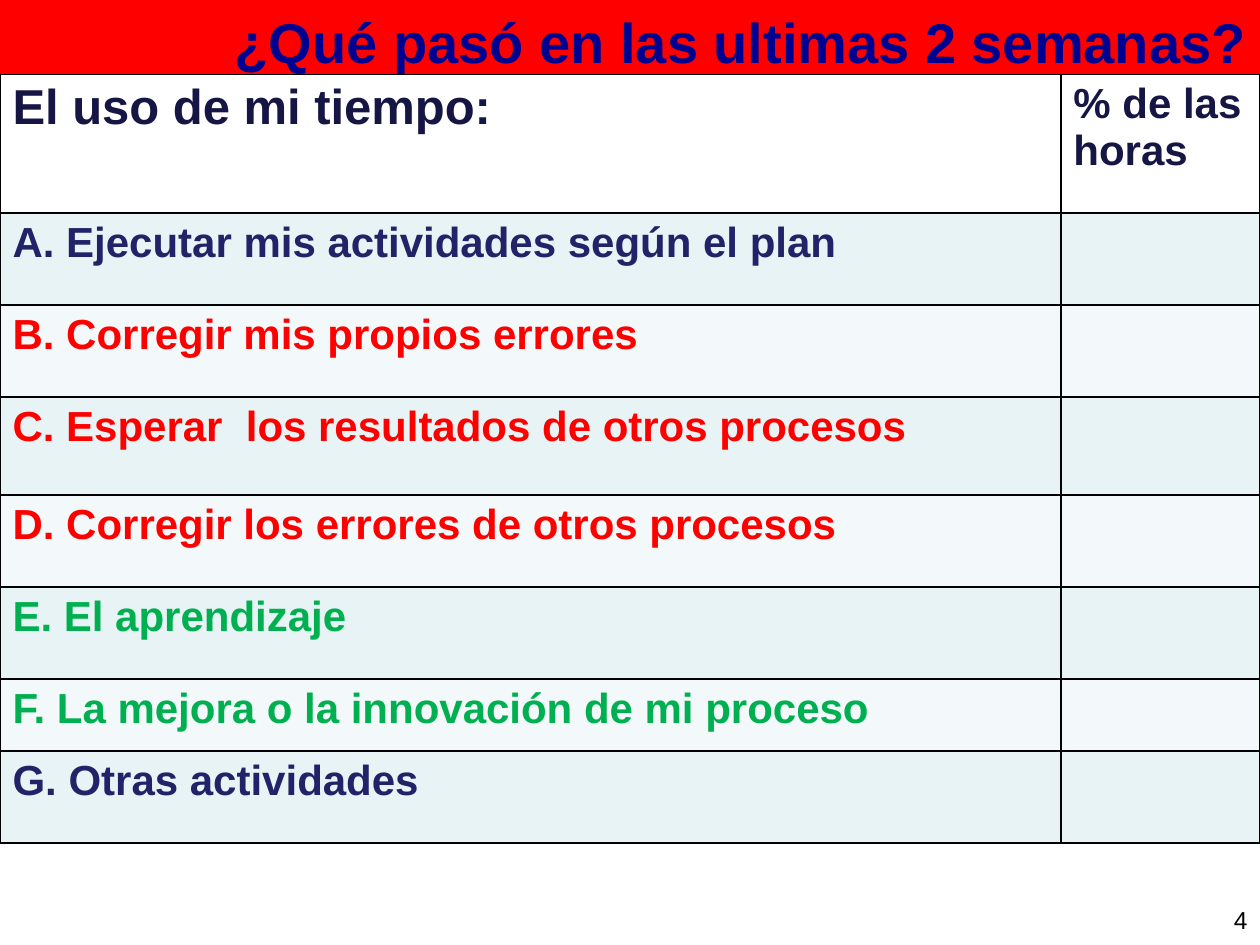
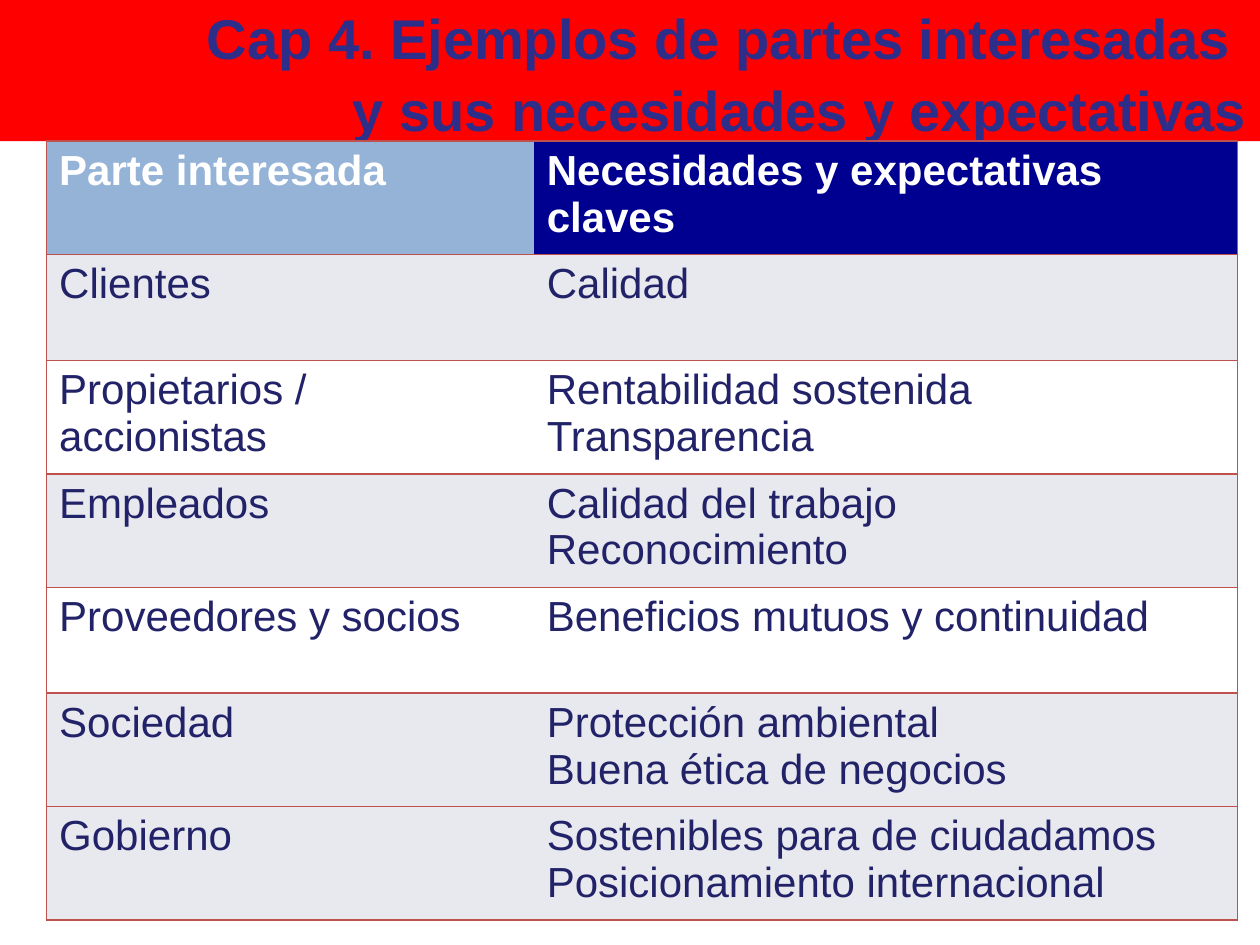
from pptx import Presentation
from pptx.dml.color import RGBColor
from pptx.enum.shapes import MSO_SHAPE as Shape
from pptx.enum.text import MSO_ANCHOR as Anchor, PP_ALIGN as Align
from pptx.oxml.ns import qn
from pptx.util import Inches, Pt
from lxml.etree import SubElement

FONT = "Arial"
WHITE = RGBColor(0xFF, 0xFF, 0xFF)
BLACK = RGBColor(0, 0, 0)
RED = RGBColor(0xFF, 0, 0)
GREEN = RGBColor(0, 0xB0, 0x50)
BLUE = RGBColor(0, 0, 0x90)
INDIGO = RGBColor(0x2D, 0x2D, 0x8A)
NAVY = RGBColor(0x22, 0x22, 0x68)
DARK_NAVY = RGBColor(0x16, 0x16, 0x45)
LIGHT_BLUE = RGBColor(0x95, 0xB3, 0xD7)
AQUA = RGBColor(0xE7, 0xF3, 0xF4)
PALE_AQUA = RGBColor(0xF3, 0xF9, 0xFA)
GRAY = RGBColor(0xE8, 0xE8, 0xEF)
BRICK = RGBColor(0xC0, 0x50, 0x4D)

TIME_USES = [
    ("A. Ejecutar mis actividades según el plan", NAVY, 0.73),
    ("B. Corregir mis propios errores", RED, 0.73),
    ("C. Esperar  los resultados de otros procesos", RED, 0.78),
    ("D. Corregir los errores de otros procesos", RED, 0.73),
    ("E. El aprendizaje", GREEN, 0.73),
    ("F. La mejora o la innovación de mi proceso", GREEN, 0.57),
    ("G. Otras actividades", NAVY, 0.73),
]
STAKEHOLDERS = [
    ("Clientes", "Calidad", GRAY),
    ("Propietarios / accionistas", "Rentabilidad sostenida\nTransparencia", WHITE),
    ("Empleados", "Calidad del trabajo\nReconocimiento", GRAY),
    ("Proveedores y socios", "Beneficios mutuos y continuidad", WHITE),
    ("Sociedad", "Protección ambiental\nBuena ética de negocios", GRAY),
    ("Gobierno", "Sostenibles para de ciudadamos\vPosicionamiento internacional", GRAY),
]


def write(frame, text, size=24, color=NAVY, bold=False, align=Align.LEFT,
          spacing=None, around=None):
    """Write one paragraph per line of text, all in the same format."""
    frame.word_wrap = True
    for number, line in enumerate(text.split("\n")):
        paragraph = frame.add_paragraph() if number else frame.paragraphs[0]
        paragraph.text = line
        paragraph.alignment = align
        if spacing:
            paragraph.line_spacing = spacing
        if around:
            paragraph.space_before = paragraph.space_after = Pt(around)
        for run in paragraph.runs:
            run.font.name = FONT
            run.font.size = Pt(size)
            run.font.bold = bold
            run.font.color.rgb = color


def add_title_band(slide, title, height, color):
    """Add the red band across the top with its right-aligned title."""
    band = slide.shapes.add_shape(Shape.RECTANGLE, 0, 0, Inches(10), Inches(height))
    band.shadow.inherit = False
    band.fill.solid()
    band.fill.fore_color.rgb = RED
    band.line.fill.background()
    band.text_frame.vertical_anchor = Anchor.MIDDLE
    write(band.text_frame, title, size=32, color=color, bold=True,
          align=Align.RIGHT, spacing=1.07)


def add_page_number(slide, number):
    """Add the page number at the bottom right."""
    corner = slide.shapes.add_textbox(Inches(6.83), Inches(7.1), Inches(3.17), Inches(0.4))
    corner.text_frame.vertical_anchor = Anchor.MIDDLE
    write(corner.text_frame, number, size=14, color=BLACK, align=Align.RIGHT)


def add_grid(slide, left, top, widths, heights):
    """Add a table with the given column widths and row heights."""
    grid = slide.shapes.add_table(len(heights), len(widths), Inches(left), Inches(top),
                                  Inches(sum(widths)), Inches(sum(heights))).table
    for column, width in zip(grid.columns, widths):
        column.width = Inches(width)
    for row, height in zip(grid.rows, heights):
        row.height = Inches(height)
    return grid


def style_cell(cell, fill, border, sides="LRTB"):
    """Fill a cell and draw its border on the named sides only."""
    properties = cell._tc.get_or_add_tcPr()
    for side in "LRTB":
        edge = SubElement(properties, qn(f"a:ln{side}"), w=str(Pt(1)))
        if side in sides:
            paint = SubElement(edge, qn("a:solidFill"))
            SubElement(paint, qn("a:srgbClr"), val=str(border))
        else:
            SubElement(edge, qn("a:noFill"))
    cell.fill.solid()
    cell.fill.fore_color.rgb = fill


def build_time_use(slide):
    """Build the survey on the use of time."""
    add_title_band(slide, "¿Qué pasó en las ultimas 2 semanas?", 0.61, BLUE)
    heights = [1.1] + [height for _, _, height in TIME_USES]
    survey = add_grid(slide, 0, 0.59, [8.42, 1.58], heights)
    for row in range(len(heights)):
        fill = (AQUA if row % 2 else PALE_AQUA) if row else WHITE
        for column in range(2):
            style_cell(survey.cell(row, column), fill, BLACK)
    heading = dict(color=DARK_NAVY, bold=True, around=12)
    write(survey.cell(0, 0).text_frame, "El uso de mi tiempo:", size=28, **heading)
    write(survey.cell(0, 1).text_frame, "% de las horas", **heading)
    for row, (activity, color, _) in enumerate(TIME_USES, 1):
        write(survey.cell(row, 0).text_frame, activity, color=color, bold=True, around=12)
    add_page_number(slide, "4")


def build_stakeholders(slide):
    """Build the table of interested parties and their needs."""
    add_title_band(slide, "Cap 4. Ejemplos de partes interesadas \v"
                          "y sus necesidades y expectativas", 1.12, INDIGO)
    needs = add_grid(slide, 0.37, 1.12, [3.87, 5.58], [0.84] * (len(STAKEHOLDERS) + 1))
    headings = [("Parte interesada", LIGHT_BLUE),
                ("Necesidades y expectativas claves", BLUE)]
    for column, (heading, fill) in enumerate(headings):
        sides = ("LTB", "RTB")[column]
        style_cell(needs.cell(0, column), fill, BRICK, sides)
        write(needs.cell(0, column).text_frame, heading, color=WHITE, bold=True)
        for row, (*texts, band) in enumerate(STAKEHOLDERS, 1):
            style_cell(needs.cell(row, column), band, BRICK, sides)
            write(needs.cell(row, column).text_frame, texts[column])


def main():
    """Build both slides and save the presentation."""
    deck = Presentation()
    deck.slide_width, deck.slide_height = Inches(10), Inches(7.5)
    for build in (build_time_use, build_stakeholders):
        build(deck.slides.add_slide(deck.slide_layouts[6]))
    deck.save("out.pptx")


if __name__ == "__main__":
    main()
